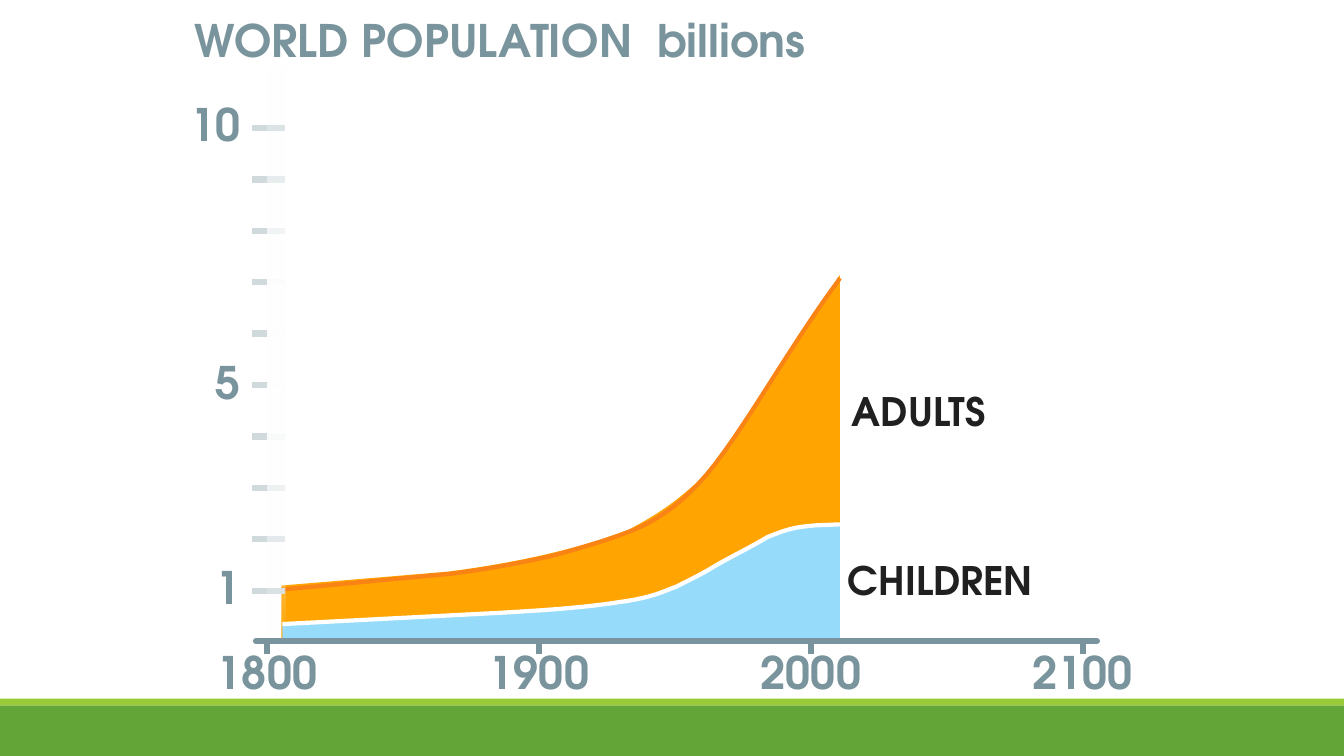
from dataclasses import dataclass

from lxml import etree
from pptx import Presentation
from pptx.dml.color import RGBColor
from pptx.enum.shapes import MSO_CONNECTOR, MSO_SHAPE
from pptx.enum.text import MSO_ANCHOR, PP_ALIGN
from pptx.oxml import parse_xml
from pptx.oxml.ns import nsdecls, qn
from pptx.util import Inches, Pt

RECTANGLE = MSO_SHAPE.RECTANGLE
STRAIGHT = MSO_CONNECTOR.STRAIGHT
LEFT, CENTER, RIGHT = PP_ALIGN.LEFT, PP_ALIGN.CENTER, PP_ALIGN.RIGHT
TOP, MIDDLE = MSO_ANCHOR.TOP, MSO_ANCHOR.MIDDLE

LAST_YEAR = 2010.6
CURVE_STEPS = 12

# A curve is a start, then segments: one point for a line, three for a Bézier.
ADULT_AREA = [
    (1805.2, 1.1),
    [(1866.4, 1.37)],
    [(1887.1, 1.51), (1912.3, 1.76), (1933.5, 2.2)],
    [(1949.1, 2.65), (1952, 2.84), (1961.3, 3.25)],
    [(1968, 3.59), (1973.5, 4.2), (1979.5, 4.59)],
    [(2000.6, 6.35)],
    [(LAST_YEAR, 7.14)],
]
ADULT_EDGE = [
    (1805.2, 1.02),
    [(1867.9, 1.33)],
    [(1885.3, 1.45), (1895.3, 1.57), (1904.2, 1.67)],
    [(1913.5, 1.8), (1923.5, 1.96), (1929.8, 2.08)],
    [(1935.7, 2.2), (1947.9, 2.41), (1961.3, 3.24)],
    [(1974.6, 4.06), (1992.1, 5.75), (2009.9, 7.02)],
    [(LAST_YEAR, 7.08)],
]
CHILD_AREA = [
    (1805.6, 0.35),
    [(1885.7, 0.57)],
    [(1906.4, 0.63), (1919, 0.69), (1929.8, 0.78)],
    [(1940.9, 0.86), (1944.6, 0.96), (1950.5, 1.08)],
    [(1956.5, 1.24), (1959.4, 1.31), (1965, 1.49)],
    [(1970.2, 1.65), (1977.6, 1.84), (1983.9, 2.04)],
    [(1991.3, 2.2), (1994.3, 2.24), (2001.7, 2.27)],
    [(LAST_YEAR, 2.29)],
]


@dataclass(frozen=True)
class Theme:
    font: str = "TeX Gyre Adventor"
    axis: str = "79949C"
    tick: str = "D0DADD"
    adults: str = "FFA400"
    adults_edge: str = "F98315"
    children: str = "97DBFB"
    white: str = "FFFFFF"
    ink: str = "202020"
    band: str = "63A537"
    band_edge: str = "99CB38"
    scale_size: int = 32
    series_size: int = 28
    axis_width: float = 4.5
    edge_width: float = 3
    line_spacing: float = 0.93


@dataclass(frozen=True)
class Grid:
    """One column is a year, one row is a billion people."""
    left: float = 2.65
    bottom: float = 6.37
    column: float = 2.697 / 100
    row: float = 0.51
    first_year: int = 1800

    def x(self, year):
        return Inches(self.left + (year - self.first_year) * self.column)

    def y(self, billions):
        return Inches(self.bottom - billions * self.row)

    def box(self, year, billions, years, rows):
        return (self.x(year), self.y(billions),
                Inches(years * self.column), Inches(rows * self.row))


def flatten(curve):
    """Turn a curve into a list of points."""
    points = [curve[0]]
    for segment in curve[1:]:
        if len(segment) == 1:
            points += segment
            continue
        controls = [points[-1], *segment]
        for step in range(1, CURVE_STEPS + 1):
            t = step / CURVE_STEPS
            weights = ((1 - t) ** 3, 3 * t * (1 - t) ** 2, 3 * t * t * (1 - t), t ** 3)
            points.append(tuple(
                sum(weight * control[axis] for weight, control in zip(weights, controls))
                for axis in (0, 1)))
    return points


class PopulationSlide:
    def __init__(self, presentation, theme, grid):
        self.width = presentation.slide_width
        self.height = presentation.slide_height
        self.theme, self.grid = theme, grid
        self.slide = presentation.slides.add_slide(presentation.slide_layouts[6])

    def paint(self, shape, color):
        shape.shadow.inherit = False
        shape.fill.solid()
        shape.fill.fore_color.rgb = RGBColor.from_string(color)
        shape.line.fill.background()

    def band(self, top, height, color):
        """Full-width band; top and height are shares of the slide."""
        shape = self.slide.shapes.add_shape(
            RECTANGLE, 0, int(top * self.height), self.width, int(height * self.height))
        self.paint(shape, color)

    def outline(self, points, close):
        places = [(self.grid.x(year), self.grid.y(billions)) for year, billions in points]
        builder = self.slide.shapes.build_freeform(*places[0])
        builder.add_line_segments(places[1:], close=close)
        return builder.convert_to_shape()

    def area(self, curve, color):
        points = flatten(curve)
        base = [(points[-1][0], 0), (points[0][0], 0)]
        self.paint(self.outline(points + base, True), color)

    def edge(self, curve, color):
        shape = self.outline(flatten(curve), False)
        shape.shadow.inherit = False
        shape.fill.background()
        shape.line.color.rgb = RGBColor.from_string(color)
        shape.line.width = Pt(self.theme.edge_width)

    def line(self, start, end, color, cap="flat"):
        (x1, y1), (x2, y2) = start, end
        connector = self.slide.shapes.add_connector(
            STRAIGHT, self.grid.x(x1), self.grid.y(y1), self.grid.x(x2), self.grid.y(y2))
        connector.line.color.rgb = RGBColor.from_string(color)
        connector.line.width = Pt(self.theme.axis_width)
        properties = connector._element.spPr
        properties.find(qn("a:ln")).set("cap", cap)
        etree.SubElement(properties, qn("a:effectLst"))

    def fade(self, box):
        """White veil, clear at the top and bottom ends."""
        shape = self.slide.shapes.add_shape(RECTANGLE, *box)
        self.paint(shape, self.theme.white)
        stops = "".join(
            f'<a:gs pos="{share * 1000}"><a:srgbClr val="{self.theme.white}">'
            f'<a:alpha val="{alpha * 1000}"/></a:srgbClr></a:gs>'
            for share, alpha in ((0, 0), (40, 100), (60, 100), (100, 0)))
        gradient = parse_xml(f'<a:gradFill {nsdecls("a")}><a:gsLst>{stops}</a:gsLst>'
                             '<a:lin ang="5400000" scaled="0"/></a:gradFill>')
        properties = shape._element.spPr
        properties.replace(properties.find(qn("a:solidFill")), gradient)

    def text(self, words, box, size, color, align=LEFT, anchor=TOP, inset=True):
        frame = self.slide.shapes.add_textbox(*box).text_frame
        frame.word_wrap = True
        frame.vertical_anchor = anchor
        if not inset:
            frame.margin_left = frame.margin_right = 0
            frame.margin_top = frame.margin_bottom = 0
        paragraph = frame.paragraphs[0]
        paragraph.text = words
        paragraph.alignment = align
        paragraph.line_spacing = self.theme.line_spacing
        paragraph.font.name = self.theme.font
        paragraph.font.size = Pt(size)
        paragraph.font.bold = True
        paragraph.font.color.rgb = RGBColor.from_string(color)


def main():
    presentation = Presentation()
    presentation.slide_width, presentation.slide_height = Inches(13.33), Inches(7.5)
    theme, grid = Theme(), Grid()
    page = PopulationSlide(presentation, theme, grid)

    page.band(0.933, 0.067, theme.band)
    page.band(0.924, 0.009, theme.band_edge)
    page.area(ADULT_AREA, theme.adults)
    page.edge(ADULT_EDGE, theme.adults_edge)
    page.area(CHILD_AREA, theme.children)
    page.edge(CHILD_AREA, theme.white)

    for billions in range(1, 11):
        page.line((1794.4, billions), (1806.7, billions), theme.tick)
    page.fade(grid.box(1800, 11.2, 6.7, 11.1))
    for billions in (1, 5, 10):
        page.text(str(billions), grid.box(1764, billions + 0.52, 30, 1),
                  theme.scale_size, theme.axis, RIGHT, MIDDLE)

    page.text("WORLD POPULATION  billions", grid.box(1769.6, 12.25, 295, 1.08),
              theme.scale_size, theme.axis)
    for name, year, billions in (("CHILDREN", 2013.6, 1.17), ("ADULTS", 2015, 4.45)):
        page.text(name, grid.box(year, billions + 0.87, 84, 1.74),
                  theme.series_size, theme.ink, anchor=MIDDLE, inset=False)

    for year in range(1800, 2101, 100):
        page.line((year, 0.08), (year, -0.24), theme.axis)
        page.text(str(year), grid.box(year - 30, -0.04, 60, 1.18),
                  theme.scale_size, theme.axis, CENTER)
    page.line((1795.9, 0.02), (2105.1, 0.02), theme.axis, cap="rnd")

    presentation.save("out.pptx")


if __name__ == "__main__":
    main()
